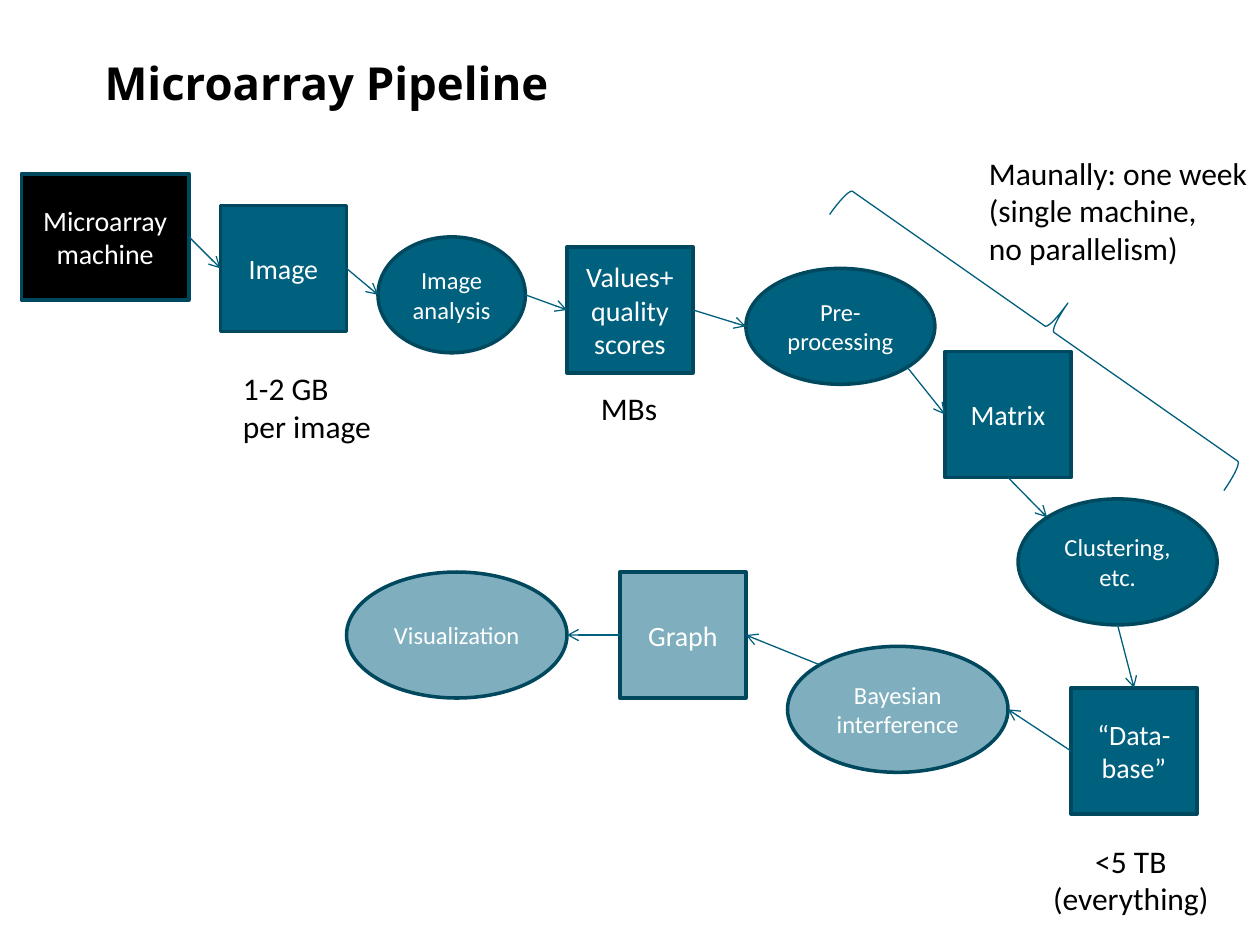
from lxml.etree import SubElement
from pptx import Presentation
from pptx.dml.color import RGBColor
from pptx.enum.shapes import MSO_CONNECTOR, MSO_SHAPE
from pptx.enum.text import MSO_ANCHOR, MSO_AUTO_SIZE, PP_ALIGN
from pptx.oxml.ns import qn
from pptx.util import Inches, Pt

TEAL, EDGE, LINE = "00617F", "00485E", "005F7C"
BLACK, WHITE = "000000", "FFFFFF"

# Fractions of width and height where lines meet a shape
SITES = {
    "top": (0.5, 0), "left": (0, 0.5), "bottom": (0.5, 1), "right": (1, 0.5),
    "top left": (0.146, 0.146), "bottom right": (0.854, 0.854),
}
SIDES = ["top", "left", "bottom", "right"]


def color(value):
    return RGBColor.from_string(value)


def write(frame, paragraphs, size, ink, align, font="Calibri", bold=False):
    """Fill a text frame; a newline inside a paragraph is a line break."""
    for i, text in enumerate(paragraphs):
        para = frame.paragraphs[0] if i == 0 else frame.add_paragraph()
        para.alignment = align
        for j, part in enumerate(text.split("\n")):
            if j:
                para.add_line_break()
            span = para.add_run()
            span.text = part
            span.font.name = font
            span.font.size = Pt(size)
            span.font.bold = bold
            span.font.color.rgb = color(ink)


def add_title(page, text):
    title = page.shapes.title
    title.left, title.top = Inches(0.73), Inches(0.14)
    title.width, title.height = Inches(8.62), Inches(0.78)
    frame = title.text_frame
    frame.auto_size = MSO_AUTO_SIZE.NONE
    frame.vertical_anchor = MSO_ANCHOR.BOTTOM
    write(frame, [text], 26, BLACK, PP_ALIGN.LEFT, "Open Sans", True)


def add_node(page, kind, place, paragraphs, size, fill, alpha):
    node = page.shapes.add_shape(kind, *map(Inches, place))
    node.shadow.inherit = False
    node.fill.solid()
    node.fill.fore_color.rgb = color(fill)
    if alpha < 100:
        tint = node.fill._xPr.find(qn("a:solidFill"))[0]
        SubElement(tint, qn("a:alpha"), val=str(alpha * 1000))
    node.line.color.rgb = color(EDGE)
    node.line.width = Pt(2)
    frame = node.text_frame
    frame.word_wrap = True
    frame.vertical_anchor = MSO_ANCHOR.MIDDLE
    write(frame, paragraphs, size, WHITE, PP_ALIGN.CENTER)
    return node


def add_data(page, left, top, *paragraphs, width=1, fill=TEAL, alpha=100):
    place = (left, top, width, 1)
    return add_node(page, MSO_SHAPE.RECTANGLE, place, paragraphs, 16, fill, alpha)


def add_step(page, left, top, width, height, text, alpha=100):
    place = (left, top, width, height)
    step = add_node(page, MSO_SHAPE.OVAL, place, [text], 14, TEAL, alpha)
    frame = step.text_frame
    frame.margin_left = frame.margin_right = Inches(0.05)
    frame.margin_top = frame.margin_bottom = Inches(0.05)
    return step


def site(node, name):
    across, down = SITES[name]
    return int(node.left + across * node.width), int(node.top + down * node.height)


def add_arrow(page, source, source_site, target, target_site):
    arrow = page.shapes.add_connector(
        MSO_CONNECTOR.STRAIGHT, *site(source, source_site), *site(target, target_site))
    if source.auto_shape_type == MSO_SHAPE.RECTANGLE:
        arrow.begin_connect(source, SIDES.index(source_site))
    if target.auto_shape_type == MSO_SHAPE.RECTANGLE:
        arrow.end_connect(target, SIDES.index(target_site))
    arrow.line.color.rgb = color(LINE)
    arrow.line.width = Pt(0.75)
    SubElement(arrow.line._get_or_add_ln(), qn("a:tailEnd"), type="arrow")
    SubElement(arrow._element.spPr, qn("a:effectLst"))


def add_label(page, place, *paragraphs, align=PP_ALIGN.LEFT):
    box = page.shapes.add_textbox(*map(Inches, place))
    frame = box.text_frame
    frame.word_wrap = False
    frame.auto_size = MSO_AUTO_SIZE.SHAPE_TO_FIT_TEXT
    write(frame, paragraphs, 18, BLACK, align)


def add_brace(page):
    brace = page.shapes.add_shape(
        MSO_SHAPE.LEFT_BRACE, Inches(8.04), Inches(0.68), Inches(0.51), Inches(3.82))
    brace.adjustments[0] = 0.083
    brace.adjustments[1] = 0.511
    brace.rotation = 305
    brace._element.spPr.find(qn("a:xfrm")).set("flipH", "1")
    brace.shadow.inherit = False
    brace.fill.background()
    brace.line.color.rgb = color(LINE)
    brace.line.width = Pt(0.75)


def main():
    deck = Presentation()
    deck.slide_width, deck.slide_height = Inches(10), Inches(7.5)
    page = deck.slides.add_slide(deck.slide_layouts[5])
    add_title(page, "Microarray Pipeline")

    # Data (rectangles) and processing steps (ellipses)
    image = add_data(page, 1.75, 1.63, "Image")
    machine = add_data(page, 0.17, 1.38, "Microarray", "machine", width=1.33, fill=BLACK)
    preprocessing = add_step(page, 5.92, 2.13, 1.5, 0.92, "Pre-processing")
    analysis = add_step(page, 3, 1.88, 1.17, 0.92, "Image analysis")
    scores = add_data(page, 4.5, 1.96, "Values+ quality scores")
    matrix = add_data(page, 7.5, 2.79, "Matrix")
    clustering = add_step(page, 8.08, 3.96, 1.58, 1, "Clustering, etc.")
    database = add_data(page, 8.5, 5.46, "“Data-base”")
    bayesian = add_step(page, 6.25, 5.13, 1.75, 1, "Bayesian interference", alpha=50)
    graph = add_data(page, 4.92, 4.54, "Graph", alpha=50)
    visualization = add_step(page, 2.75, 4.54, 1.75, 1, "Visualization", alpha=50)

    # Flow through the pipeline
    for flow in [
        (machine, "right", image, "left"),
        (image, "right", analysis, "left"),
        (analysis, "right", scores, "left"),
        (scores, "right", preprocessing, "left"),
        (preprocessing, "bottom right", matrix, "left"),
        (matrix, "bottom", clustering, "top left"),
        (clustering, "bottom", database, "top"),
        (database, "left", bayesian, "right"),
        (bayesian, "top left", graph, "right"),
        (graph, "left", visualization, "right"),
    ]:
        add_arrow(page, *flow)

    # Data volumes and effort
    add_label(page, (1.83, 2.88, 1.27, 0.71), "1-2 GB", "per image")
    add_label(page, (4.67, 3.04, 0.67, 0.4), "MBs")
    add_label(page, (7.75, 1.17, 2.32, 1.01),
              "Maunally: one week\n(single machine,", "no parallelism)")
    add_brace(page)
    add_label(page, (8.25, 6.63, 1.45, 0.71), "<5 TB\n(everything)",
              align=PP_ALIGN.CENTER)

    deck.save("out.pptx")


if __name__ == "__main__":
    main()
